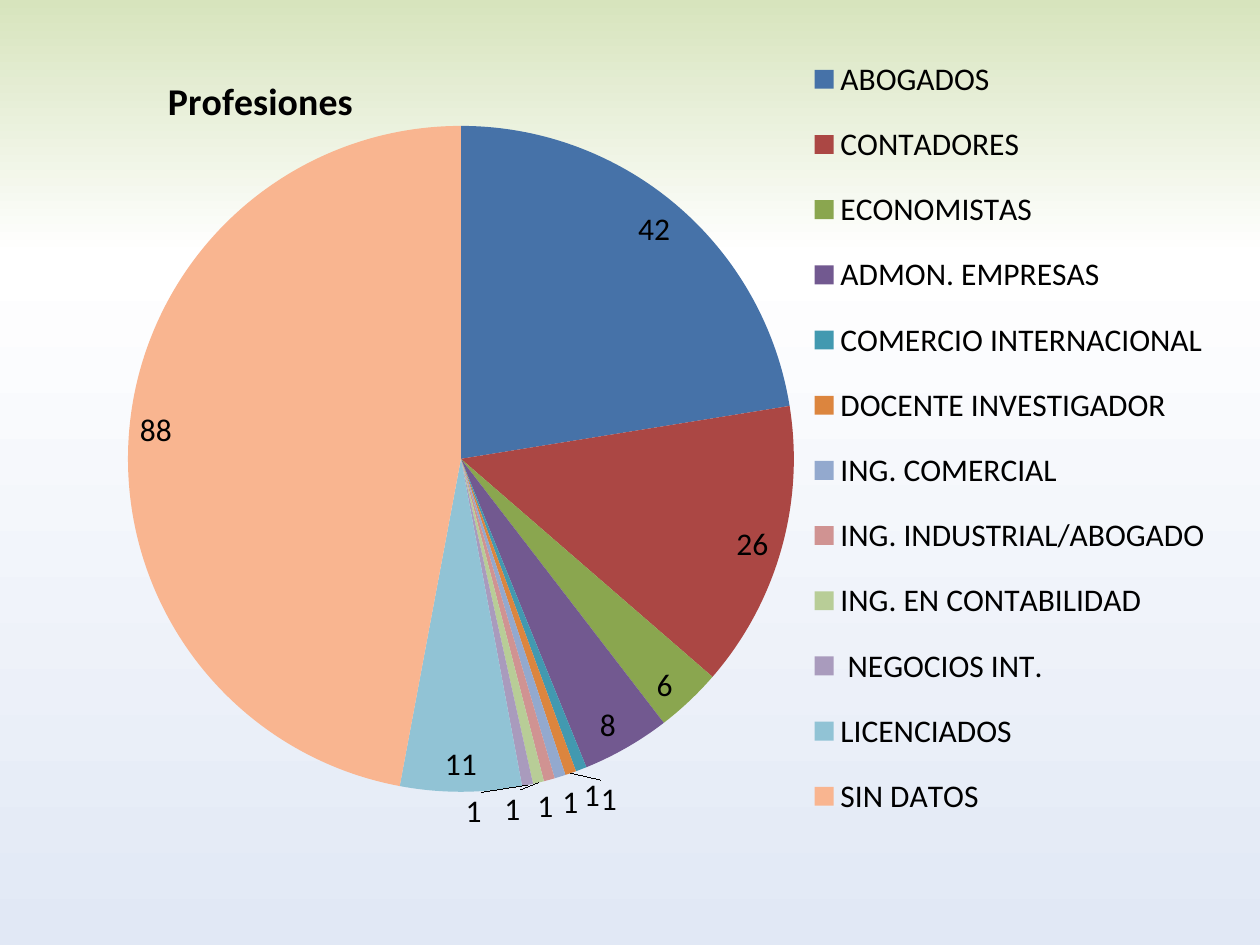
import copy
import lxml.etree
import pptx
import pptx.chart.data
import pptx.dml.color
import pptx.enum.chart
import pptx.oxml.ns
import pptx.util

Pt = pptx.util.Pt
RGB = pptx.dml.color.RGBColor
qn = pptx.oxml.ns.qn

GREEN = RGB(0xD7, 0xE4, 0xBD)
WHITE = RGB(0xFF, 0xFF, 0xFF)
PALE = RGB(0xE1, 0xE8, 0xF5)
BLACK = RGB(0, 0, 0)

JOBS = [
    ("ABOGADOS", 42, RGB(0x46, 0x72, 0xA8)),
    ("CONTADORES", 26, RGB(0xAB, 0x47, 0x44)),
    ("ECONOMISTAS", 6, RGB(0x8A, 0xA6, 0x4F)),
    ("ADMON. EMPRESAS", 8, RGB(0x72, 0x59, 0x90)),
    ("COMERCIO INTERNACIONAL", 1, RGB(0x42, 0x99, 0xB0)),
    ("DOCENTE INVESTIGADOR", 1, RGB(0xDC, 0x85, 0x3E)),
    ("ING. COMERCIAL", 1, RGB(0x93, 0xA9, 0xCE)),
    ("ING. INDUSTRIAL/ABOGADO", 1, RGB(0xD0, 0x93, 0x92)),
    ("ING. EN CONTABILIDAD", 1, RGB(0xB8, 0xCD, 0x97)),
    (" NEGOCIOS INT.", 1, RGB(0xA9, 0x9B, 0xBD)),
    ("LICENCIADOS", 11, RGB(0x91, 0xC3, 0xD5)),
    ("SIN DATOS", 88, RGB(0xF9, 0xB5, 0x90)),
]


def place(node, **parts):
    for old in node.findall(qn("c:layout")):
        node.remove(old)
    layout = lxml.etree.Element(qn("c:layout"))
    manual = lxml.etree.SubElement(layout, qn("c:manualLayout"))
    for tag, val in parts.items():
        lxml.etree.SubElement(manual, qn("c:" + tag)).set("val", str(val))
    over = node.find(qn("c:overlay"))
    node.insert(0 if over is None else node.index(over), layout)


deck = pptx.Presentation()
deck.slide_width, deck.slide_height = Pt(720), Pt(540)
slide = deck.slides.add_slide(deck.slide_layouts[6])

back = slide.background.fill
back.gradient()
back.gradient_angle = 270
stops = slide.background._cSld.find(".//" + qn("a:gsLst"))
stops.insert(1, copy.deepcopy(stops[0]))
for stop, (pos, tint) in zip(back.gradient_stops, [(0, GREEN), (0.27, WHITE), (1, PALE)]):
    stop.position = pos
    stop.color.rgb = tint

data = pptx.chart.data.CategoryChartData()
data.categories = [name for name, count, tint in JOBS]
data.add_series("Profesiones", [count for name, count, tint in JOBS])
chart = slide.shapes.add_chart(
    pptx.enum.chart.XL_CHART_TYPE.PIE, Pt(59.76), Pt(9.36), Pt(646.56), Pt(481.68), data
).chart
chart.font.name = "Calibri"
chart.font.size = Pt(18)
chart.font.color.rgb = BLACK

chart.has_title = True
title = chart.chart_title
title.include_in_layout = False
run = title.text_frame.paragraphs[0].add_run()
run.text = "Profesiones"
run.font.name = "Calibri"
run.font.size = Pt(21.6)
run.font.bold = True
run.font.color.rgb = BLACK
place(title._element, xMode="edge", yMode="edge", x=0.05, y=0.06)

chart.has_legend = True
legend = chart.legend
legend.position = pptx.enum.chart.XL_LEGEND_POSITION.RIGHT
legend.include_in_layout = False
place(legend._element, xMode="edge", yMode="edge", x=0.62, y=0.02, w=0.36, h=0.96)

plot = chart.plots[0]
plot.vary_by_categories = True
place(chart._chartSpace.chart.plotArea, layoutTarget="inner",
      xMode="edge", yMode="edge", x=0.02, y=0.13, w=0.59, h=0.79)

series = plot.series[0]
for i, (name, count, tint) in enumerate(JOBS):
    fill = series.points[i].format.fill
    fill.solid()
    fill.fore_color.rgb = tint

labels = series.data_labels
labels.show_value = True
labels.position = pptx.enum.chart.XL_LABEL_POSITION.BEST_FIT
lead = labels._element.find(qn("c:showLeaderLines"))
if lead is None:
    lead = lxml.etree.SubElement(labels._element, qn("c:showLeaderLines"))
lead.set("val", "1")

deck.save("out.pptx")
